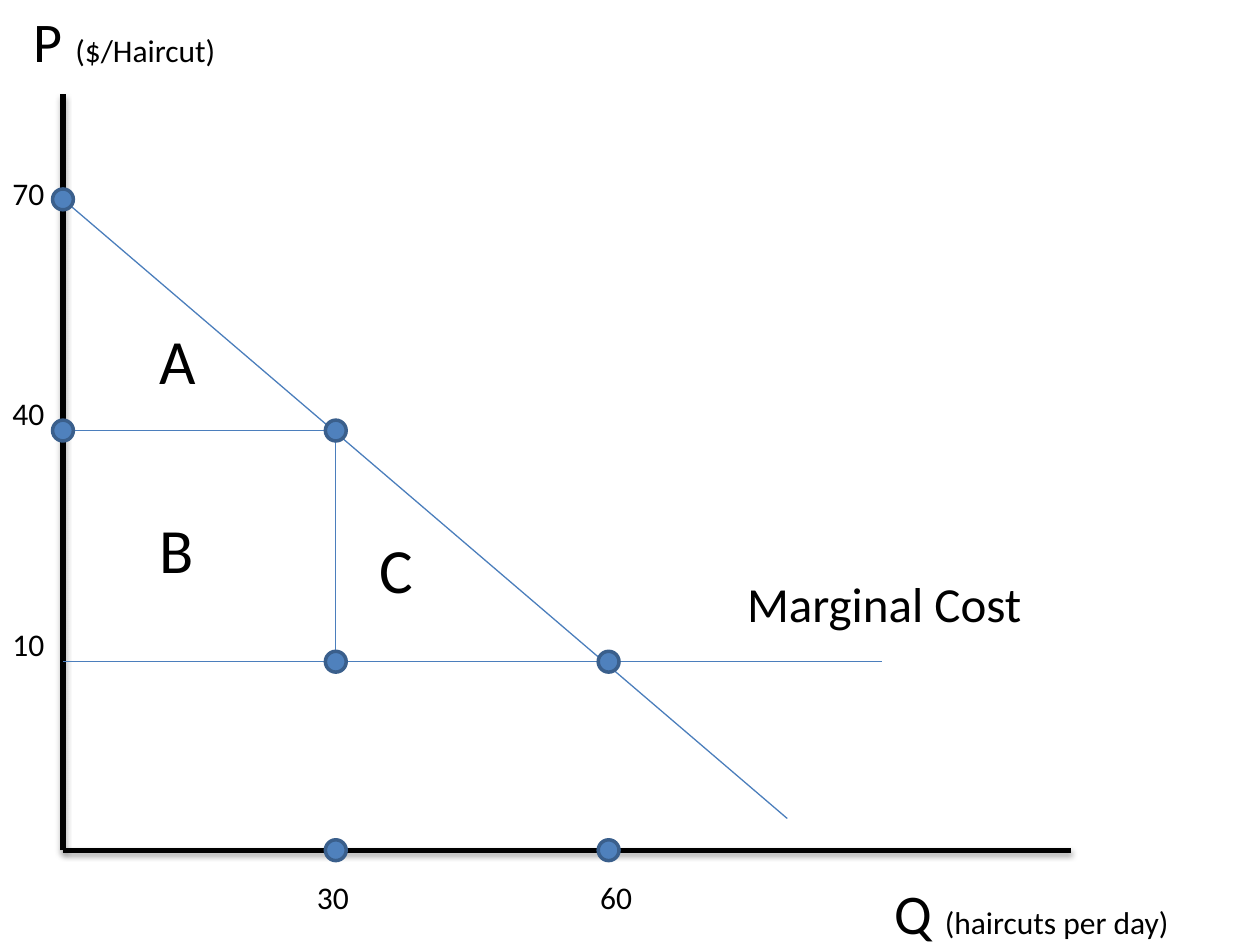
from lxml import etree
from pptx import Presentation
from pptx.dml.color import RGBColor
from pptx.enum.shapes import MSO_CONNECTOR, MSO_SHAPE
from pptx.enum.text import MSO_AUTO_SIZE
from pptx.oxml.ns import qn
from pptx.util import Cm, Pt

STRAIGHT = MSO_CONNECTOR.STRAIGHT
OVAL = MSO_SHAPE.OVAL
FIT_SHAPE = MSO_AUTO_SIZE.SHAPE_TO_FIT_TEXT

BLACK = "000000"
CURVE_BLUE = "4B7EBC"
DOT_FILL = "4F81BD"
DOT_EDGE = "3A5F8C"
FONT = "Calibri"

PLOT_BOX = (1.27, 1.9, 20.32, 15.24)
DOT_SIZE = 0.42
TOP_PRICE = 70
TOP_PRICE_Y = 2.12
STEP = 30
PRICE_STEP = 4.66
QUANTITY_STEP = 5.5


def colour(hex_string):
    return RGBColor.from_string(hex_string)


def price_y(price):
    return TOP_PRICE_Y + (TOP_PRICE - price) / STEP * PRICE_STEP


def quantity_x(quantity):
    return quantity / STEP * QUANTITY_STEP


def add_line(page, box, start, end, line_colour, weight, shadow=False):
    left, top = box[:2]
    line = page.shapes.add_connector(
        STRAIGHT,
        Cm(left + start[0]), Cm(top + start[1]),
        Cm(left + end[0]), Cm(top + end[1]),
    )
    line.line.color.rgb = colour(line_colour)
    line.line.width = Pt(weight)
    effects = etree.SubElement(line._element.spPr, qn("a:effectLst"))
    if shadow:
        outer = etree.SubElement(
            effects, qn("a:outerShdw"),
            blurRad="40000", dist="23000", dir="5400000", rotWithShape="0",
        )
        tint = etree.SubElement(outer, qn("a:srgbClr"), val=BLACK)
        etree.SubElement(tint, qn("a:alpha"), val="35000")


def add_label(page, box, place, *pieces):
    x, y, width, height = place
    label = page.shapes.add_textbox(
        Cm(box[0] + x), Cm(box[1] + y), Cm(width), Cm(height)
    )
    frame = label.text_frame
    frame.word_wrap = True
    frame.auto_size = FIT_SHAPE
    para = frame.paragraphs[0]
    for text, size in pieces:
        span = para.add_run()
        span.text = text
        span.font.name = FONT
        span.font.size = Pt(size)
        span.font.color.rgb = colour(BLACK)


def add_dot(page, box, x, y):
    dot = page.shapes.add_shape(
        OVAL,
        Cm(box[0] + x - DOT_SIZE / 2), Cm(box[1] + y - DOT_SIZE / 2),
        Cm(DOT_SIZE), Cm(DOT_SIZE),
    )
    dot.shadow.inherit = False
    dot.fill.solid()
    dot.fill.fore_color.rgb = colour(DOT_FILL)
    dot.line.color.rgb = colour(DOT_EDGE)
    dot.line.width = Pt(2)


def draw_axes(page, box):
    width, height = box[2:]
    for end in ((0, 0), (width, height)):
        add_line(page, box, (0, height), end, BLACK, 3, shadow=True)
    add_label(page, box, (-0.84, -1.9, 8.26, 1.62), ("P ", 32), ("($/Haircut)", 18))
    add_label(page, box, (16.51, 15.68, 6.78, 1.62), ("Q ", 32), ("(haircuts per day)", 18))
    for price, y in ((70, 1.48), (40, 5.92), (10, 10.58)):
        add_label(page, box, (-1.27, y, 1.27, 1.02), (str(price), 18))
    for quantity, x, width in ((30, 4.87, 2.11), (60, 10.58, 1.9)):
        add_label(page, box, (x, 15.68, width, 1.06), (str(quantity), 18))


def draw_curves(page, box):
    middle = (quantity_x(30), price_y(40))
    segments = (
        ((0, price_y(70)), (14.6, 14.6)),
        ((0, price_y(10)), (16.51, price_y(10))),
        ((0, price_y(40)), middle),
        (middle, (quantity_x(30), price_y(10))),
    )
    for start, end in segments:
        add_line(page, box, start, end, CURVE_BLUE, 0.75)
    add_label(page, box, (13.54, 9.53, 7.62, 1.45), ("Marginal Cost", 28))


def draw_areas(page, box):
    areas = (("A", 1.7, 4.45, 2.54), ("B", 1.7, 8.26, 1.48), ("C", 6.14, 8.68, 3.18))
    for name, x, y, width in areas:
        add_label(page, box, (x, y, width, 1.8), (name, 36))


def draw_points(page, box):
    for quantity, price in ((0, 40), (0, 70), (30, 40), (30, 10), (60, 10)):
        add_dot(page, box, quantity_x(quantity), price_y(price))
    for quantity in (30, 60):
        add_dot(page, box, quantity_x(quantity), box[3])


def main():
    deck = Presentation()
    deck.slide_width, deck.slide_height = Cm(25.4), Cm(19.05)
    page = deck.slides.add_slide(deck.slide_layouts[6])
    for draw in (draw_axes, draw_curves, draw_areas, draw_points):
        draw(page, PLOT_BOX)
    deck.save("out.pptx")


if __name__ == "__main__":
    main()
